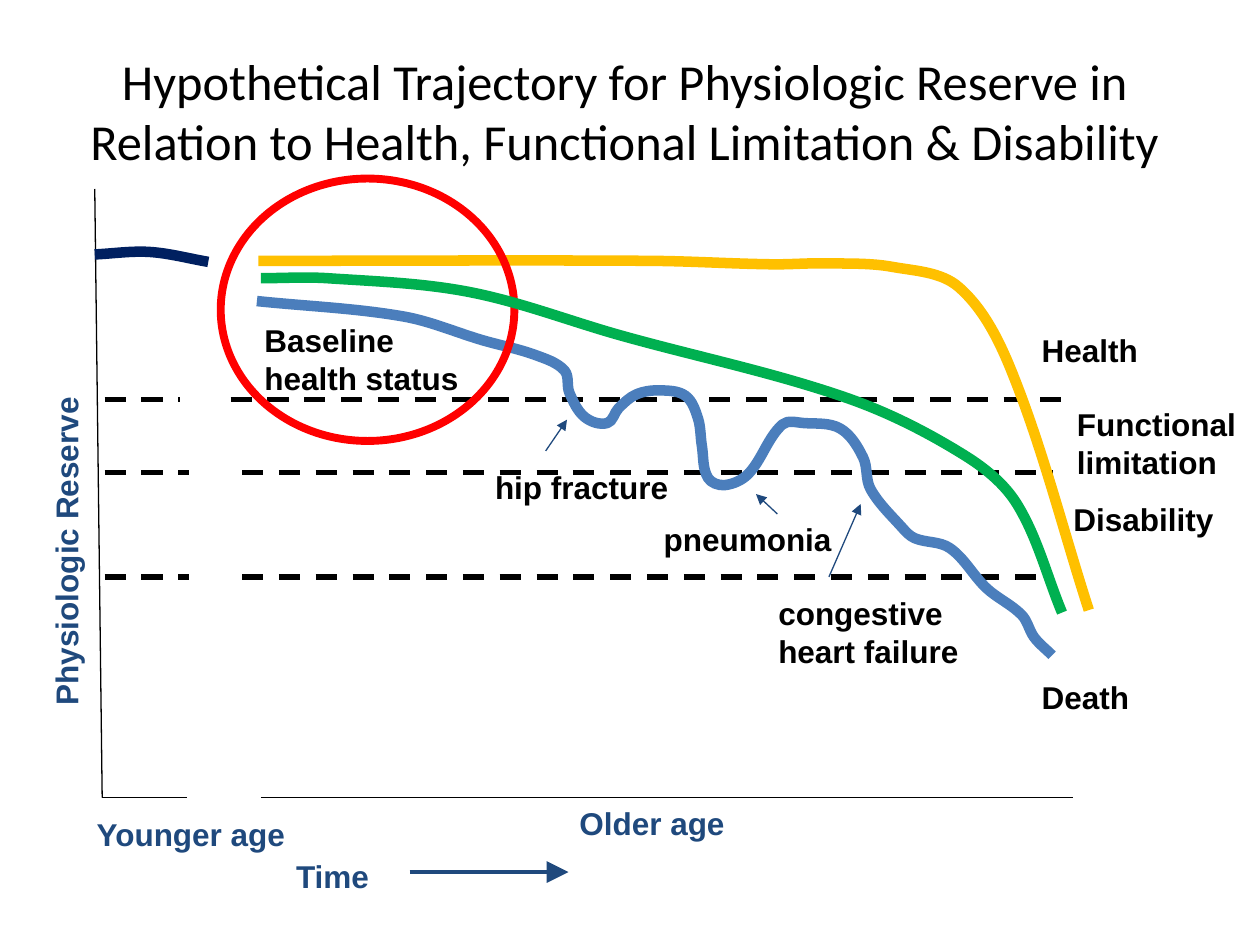
import math
from typing import NamedTuple

import pptx
import pptx.dml.color
import pptx.enum.dml
import pptx.enum.shapes
import pptx.enum.text
import pptx.oxml.ns
import pptx.util

Cm = pptx.util.Cm
Pt = pptx.util.Pt
qn = pptx.oxml.ns.qn

COLORS = {
    "black": "000000",
    "axis_label": "1F497D",
    "young": "002060",
    "events": "4B7EBC",
    "health": "FFC000",
    "decline": "00B050",
    "circle": "FF0000",
}

# All positions are in centimetres.
AXIS_TOP, AXIS_BOTTOM = 3.81, 16.08
AXIS_LEFT, AXIS_FOOT = 1.91, 2.06  # the vertical axis leans slightly
THRESHOLD_START = 2.11
OUTCOME_LEFT = 20.75  # Health and Death share a left edge
LINE_HEIGHT, TEXT_MARGINS = 0.77, 0.25


class Label(NamedTuple):
    text: str
    left: float
    top: float
    width: float
    color: str = "black"
    rotation: int = 0


class Line(NamedTuple):
    x1: float
    y1: float
    x2: float
    y2: float
    color: str = "black"
    width: float = 0.75
    dashed: bool = False
    arrow_size: str = ""


class Threshold(NamedTuple):
    """A dashed level, broken between younger and older age."""
    y: float
    young_end: float
    old_start: float
    old_end: float


class Trajectory(NamedTuple):
    color: str
    knots: list


AXES = [
    Line(AXIS_LEFT, AXIS_TOP, AXIS_FOOT, AXIS_BOTTOM),
    Line(AXIS_FOOT, AXIS_BOTTOM, 3.76, AXIS_BOTTOM),
    Line(5.26, AXIS_BOTTOM, 21.64, AXIS_BOTTOM),
]
THRESHOLDS = [
    Threshold(8.05, 3.63, 4.65, 21.41),
    Threshold(9.53, 3.81, 4.88, 21.23),
    Threshold(11.63, 3.81, 4.88, 21.23),
]
TIME_ARROW = Line(8.26, 17.58, 11.46, 17.58, "axis_label", 2.5, arrow_size="lg")
EVENT_ARROWS = [
    Line(*ends, "axis_label", arrow_size="med")
    for ends in (
        (11, 9.09, 11.43, 8.46),
        (15.67, 10.36, 15.24, 9.96),
        (16.71, 11.63, 17.35, 10.16),
    )
]
LABELS = [
    Label("Younger age", 1.7, 16.31, 4.34, "axis_label"),
    Label("Older age", 11.43, AXIS_BOTTOM, 3.48, "axis_label"),
    Label("Physiologic Reserve", -2.06, 10.57, 6.78, "axis_label", 270),
    Label("Time", 5.72, 17.15, 2.01, "axis_label"),
    Label("Baseline\nhealth status", 5.08, 6.35, 4.47),
    Label("hip fracture", 9.73, 9.32, 4.04),
    Label("pneumonia", 13.13, 10.36, 3.94),
    Label("congestive\nheart failure", 15.44, 11.86, 4.19),
    Label("Health", OUTCOME_LEFT, 6.55, 2.46),
    Label("Functional\nlimitation", 21.46, 8.05, 3.94),
    Label("Disability", 21.39, 9.96, 3.35),
    Label("Death", OUTCOME_LEFT, 13.54, 2.29),
]

# The trajectory with acute events is the sum of its phases, in order of time.
EVENT_PHASES = {
    "slow decline": [(5.18, 6.07), (8.13, 6.38), (9.73, 6.86), (10.8, 7.16), (11.38, 7.47)],
    "hip fracture": [(11.48, 7.92), (11.79, 8.41), (12.24, 8.53)],
    "first recovery": [(12.47, 8.23), (12.83, 7.95), (13.31, 7.87), (13.82, 7.98)],
    "pneumonia": [(14.07, 8.43), (14.15, 8.99), (14.27, 9.63), (14.61, 9.78)],
    "second recovery": [(15.09, 9.55), (15.77, 8.56), (16.21, 8.53), (16.94, 8.64)],
    "heart failure": [(17.4, 9.22), (17.55, 9.86), (18.19, 10.64), (18.44, 10.85)],
    "final decline": [(19.15, 11.05), (19.89, 11.86), (20.6, 12.4), (20.85, 12.85),
                      (21.21, 13.21)],
}
YOUNG = Trajectory("young", [(1.91, 5.13), (3.02, 5.08), (4.2, 5.28)])
EVENTS = Trajectory("events", [knot for phase in EVENT_PHASES.values() for knot in phase])
HEALTH = Trajectory("health", [
    (5.21, 5.26), (13.11, 5.26), (15.57, 5.33), (16.66, 5.31), (17.98, 5.38),
    (19.33, 5.79), (20.4, 7.5), (21.95, 12.3)])
DECLINE = Trajectory("decline", [
    (5.26, 5.61), (6.6, 5.61), (9.47, 5.89), (12.5, 6.76), (17.09, 8.03),
    (19.46, 9.19), (20.5, 10.16), (21.41, 12.35)])


def rgb(name: str) -> pptx.dml.color.RGBColor:
    return pptx.dml.color.RGBColor.from_string(COLORS[name])


def style_line(shape, color: str, width: float) -> None:
    shape.line.color.rgb = rgb(color)
    shape.line.width = Pt(width)


def style_outline(shape, color: str, width: float) -> None:
    shape.fill.background()
    shape.shadow.inherit = False
    style_line(shape, color, width)


def add_text(slide, text: str, left: float, top: float, width: float, height: float, *,
             size: float = 18, font: str = "Arial", color: str = "black", bold: bool = True,
             wrap: bool = False, align=pptx.enum.text.PP_ALIGN.LEFT,
             anchor=pptx.enum.text.MSO_ANCHOR.TOP, rotation: int = 0) -> None:
    box = slide.shapes.add_textbox(Cm(left), Cm(top), Cm(width), Cm(height))
    box.rotation = rotation
    frame = box.text_frame
    frame.word_wrap = wrap
    frame.vertical_anchor = anchor
    frame.text = text
    for paragraph in frame.paragraphs:
        paragraph.alignment = align
        paragraph.font.size = Pt(size)
        paragraph.font.name = font
        paragraph.font.bold = bold
        paragraph.font.color.rgb = rgb(color)


def add_label(slide, label: Label) -> None:
    height = TEXT_MARGINS + LINE_HEIGHT * len(label.text.splitlines())
    add_text(slide, label.text, label.left, label.top, label.width, height,
             color=label.color, rotation=label.rotation)


def add_line(slide, line: Line) -> None:
    connector = slide.shapes.add_connector(
        pptx.enum.shapes.MSO_CONNECTOR.STRAIGHT,
        Cm(line.x1), Cm(line.y1), Cm(line.x2), Cm(line.y2))
    style_line(connector, line.color, line.width)
    make = connector._element.makeelement
    if line.dashed:
        connector.line.dash_style = pptx.enum.dml.MSO_LINE.DASH
    if line.arrow_size:
        head = {"type": "triangle", "w": line.arrow_size, "len": line.arrow_size}
        connector.line._get_or_add_ln().append(make(qn("a:tailEnd"), head))
    connector._element.spPr.append(make(qn("a:effectLst"), {}))


def add_threshold(slide, level: Threshold) -> None:
    for start, end in ((THRESHOLD_START, level.young_end), (level.old_start, level.old_end)):
        add_line(slide, Line(start, level.y, end, level.y, width=3, dashed=True))


def bezier_points(knots: list) -> list:
    """Return two handles and an end for each span between knots.

    At a knot the curve runs parallel to the chord between its neighbours;
    each handle is a third of its span long.
    """
    headings = []
    for before, after in zip(knots[:1] + knots[:-1], knots[1:] + knots[-1:]):
        headings.append(math.atan2(after[1] - before[1], after[0] - before[0]))
    points = []
    for i, (start, end) in enumerate(zip(knots, knots[1:])):
        reach = math.dist(start, end) / 3
        for (x, y), heading, step in ((start, headings[i], reach),
                                      (end, headings[i + 1], -reach)):
            points.append((x + step * math.cos(heading), y + step * math.sin(heading)))
        points.append(end)
    return points


def add_trajectory(slide, trajectory: Trajectory) -> None:
    """Build an outline through the Bezier points, then join each three as a curve."""
    start, *points = [(Cm(x), Cm(y)) for x, y in
                      trajectory.knots[:1] + bezier_points(trajectory.knots)]
    builder = slide.shapes.build_freeform(*start)
    builder.add_line_segments(points, close=False)
    shape = builder.convert_to_shape()
    steps = shape._element.xpath(".//a:lnTo")
    for i in range(0, len(steps), 3):
        curve = shape._element.makeelement(qn("a:cubicBezTo"), {})
        steps[i].addprevious(curve)
        for step in steps[i:i + 3]:
            curve.append(step[0])
            step.getparent().remove(step)
    style_outline(shape, trajectory.color, 6)


def main() -> None:
    deck = pptx.Presentation()
    deck.slide_width, deck.slide_height = Cm(25.4), Cm(19.05)
    slide = deck.slides.add_slide(deck.slide_layouts[6])
    add_text(slide, "Hypothetical Trajectory for Physiologic Reserve in "
             "Relation to Health, Functional Limitation & Disability",
             1.12, 0.64, 22.96, 3.18, size=28.8, font="Calibri", bold=False, wrap=True,
             align=pptx.enum.text.PP_ALIGN.CENTER, anchor=pptx.enum.text.MSO_ANCHOR.MIDDLE)
    for line in [*AXES, TIME_ARROW, *EVENT_ARROWS]:
        add_line(slide, line)
    for level in THRESHOLDS:
        add_threshold(slide, level)
    for trajectory in (YOUNG, EVENTS, HEALTH):
        add_trajectory(slide, trajectory)
    for label in LABELS:
        add_label(slide, label)
    baseline_circle = slide.shapes.add_shape(
        pptx.enum.shapes.MSO_SHAPE.OVAL, Cm(4.45), Cm(3.6), Cm(5.92), Cm(5.29))
    style_outline(baseline_circle, "circle", 4.5)
    add_trajectory(slide, DECLINE)
    deck.save("out.pptx")


if __name__ == "__main__":
    main()
